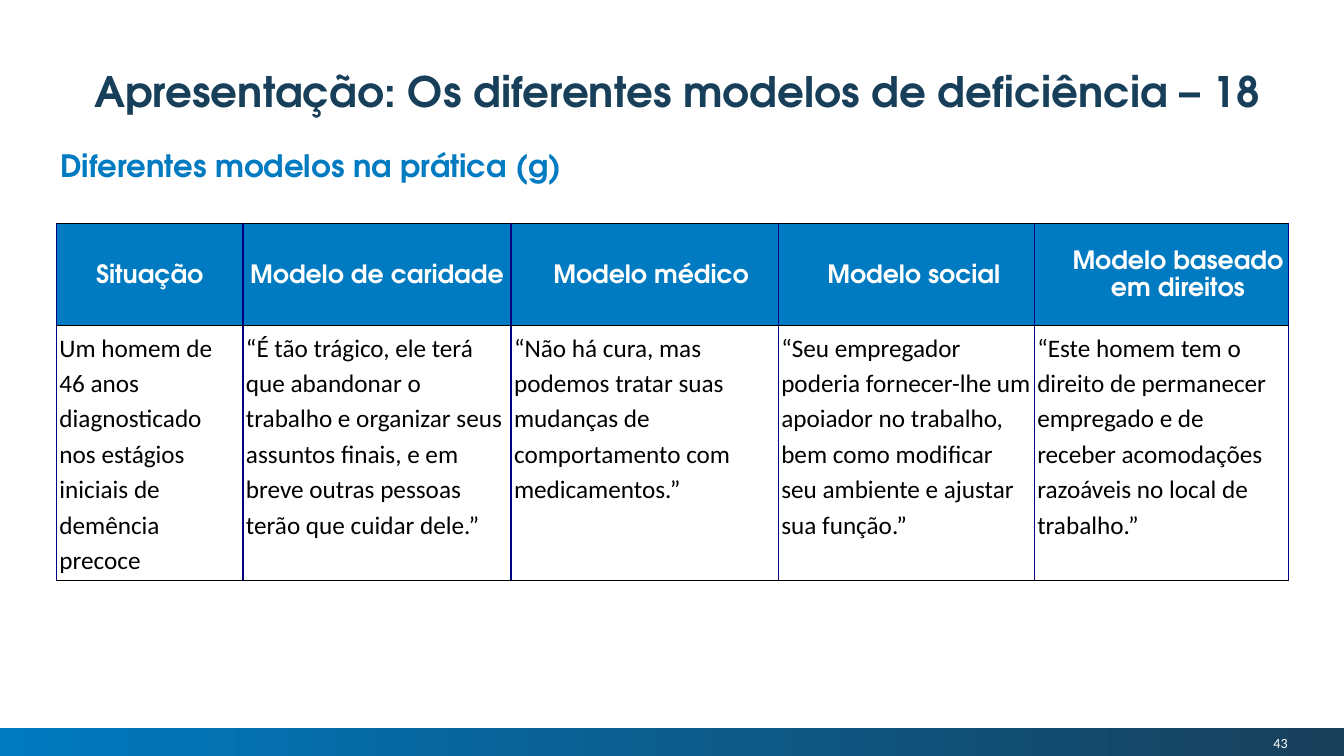
from lxml.etree import SubElement
from pptx import Presentation
from pptx.dml.color import RGBColor
from pptx.enum.shapes import MSO_SHAPE
from pptx.enum.text import MSO_ANCHOR, MSO_AUTO_SIZE, PP_ALIGN
from pptx.oxml.ns import qn
from pptx.util import Inches, Pt

BLUE = RGBColor(0x00, 0x7A, 0xC0)
DARK_BLUE = RGBColor(0x18, 0x3F, 0x5A)
NAVY = RGBColor(0x00, 0x00, 0x80)
BLACK = RGBColor(0x00, 0x00, 0x00)
WHITE = RGBColor(0xFF, 0xFF, 0xFF)

HEADING_FONT = "TeX Gyre Adventor"
BODY_FONT = "Calibri"
SLIDE_WIDTH, SLIDE_HEIGHT = Inches(13.33), Inches(7.5)

TITLE_FORMAT = {"name": HEADING_FONT, "size": Pt(30), "bold": True}
SUBTITLE_FORMAT = {"name": HEADING_FONT, "size": Pt(22), "bold": True}
HEADER_FORMAT = {"name": HEADING_FONT, "size": Pt(18), "bold": True}
BODY_FORMAT = {"name": BODY_FONT, "size": Pt(18), "bold": False}
NUMBER_FORMAT = {"name": BODY_FONT, "size": Pt(10), "bold": False}

# Heading, its left indent in inches, column width in % of the slide, example
MODELS = [
    ("Situação", 0, 13.88,
     "Um homem de 46 anos diagnosticado nos estágios iniciais de demência precoce"),
    ("Modelo de caridade", 0, 19.95,
     "“É tão trágico, ele terá que abandonar o trabalho e organizar seus assuntos "
     "finais, e em breve outras pessoas terão que cuidar dele.”"),
    ("Modelo médico", 0.13, 19.88,
     "“Não há cura, mas podemos tratar suas mudanças de comportamento com "
     "medicamentos.”"),
    ("Modelo social", 0.15, 19.05,
     "“Seu empregador poderia fornecer-lhe um apoiador no trabalho, bem como "
     "modificar seu ambiente e ajustar sua função.”"),
    ("Modelo baseado em direitos", 0.33, 18.9,
     "“Este homem tem o direito de permanecer empregado e de receber acomodações "
     "razoáveis no local de trabalho.”"),
]
ROW_HEIGHTS = (13.47, 33.73)
BORDERS = {"a:lnL": NAVY, "a:lnR": NAVY, "a:lnT": BLACK, "a:lnB": BLACK}


def across(percent):
    return round(SLIDE_WIDTH * percent / 100)


def down(percent):
    return round(SLIDE_HEIGHT * percent / 100)


def area(left, top, width, height):
    """Turn percentages of the slide into left, top, width and height."""
    return across(left), down(top), across(width), down(height)


def set_values(target, values):
    for attribute, value in values.items():
        setattr(target, attribute, value)


def set_margins(target, horizontal, vertical):
    set_values(target, {"margin_left": Inches(horizontal), "margin_right": Inches(horizontal),
                        "margin_top": Inches(vertical), "margin_bottom": Inches(vertical)})


def write(frame, text, font_format, color, align=PP_ALIGN.LEFT, spacing=1.0):
    paragraph = frame.paragraphs[0]
    paragraph.text = text
    set_values(paragraph, {"alignment": align, "line_spacing": spacing})
    set_values(paragraph.font, font_format)
    paragraph.font.color.rgb = color
    return paragraph


def add_title(slide, text):
    title = slide.shapes.title
    set_values(title, dict(zip(("left", "top", "width", "height"),
                               area(3.23, 7.33, 94.3, 6.27))))
    frame = title.text_frame
    set_values(frame, {"word_wrap": True, "auto_size": MSO_AUTO_SIZE.NONE,
                       "vertical_anchor": MSO_ANCHOR.TOP})
    set_margins(frame, 0.1, 0.05)
    write(frame, text, TITLE_FORMAT, DARK_BLUE, PP_ALIGN.CENTER, 1.1)


def add_label(slide, box, text, font_format, color, anchor, **layout):
    frame = slide.shapes.add_textbox(*box).text_frame
    set_values(frame, {"word_wrap": True, "vertical_anchor": anchor})
    set_margins(frame, 0, 0)
    write(frame, text, font_format, color, **layout)


def add_footer_band(slide):
    band = slide.shapes.add_shape(MSO_SHAPE.RECTANGLE, *area(0, 96.27, 100, 3.73))
    band.shadow.inherit = False
    band.line.fill.background()
    band.fill.gradient()
    band.fill.gradient_angle = 0
    for stop, color in zip(band.fill.gradient_stops, (BLUE, DARK_BLUE)):
        stop.color.rgb = color


def add_borders(cell):
    properties = cell._tc.get_or_add_tcPr()
    for side, color in BORDERS.items():
        line = SubElement(properties, qn(side), w=str(Pt(1)))
        fill = SubElement(line, qn("a:solidFill"))
        SubElement(fill, qn("a:srgbClr"), val=str(color))


def fill_cell(cell, text, font_format, color, background, margin, anchor, align, indent=0):
    add_borders(cell)
    cell.fill.solid()
    cell.fill.fore_color.rgb = background
    cell.vertical_anchor = anchor
    set_margins(cell, margin, margin)
    paragraph = write(cell.text_frame, text, font_format, color, align, 1.15)
    paragraph._p.get_or_add_pPr().set("marL", str(Inches(indent)))


def add_models_table(slide):
    total_width = sum(width for _, _, width, _ in MODELS)
    box = area(4.2, 29.6, total_width, sum(ROW_HEIGHTS))
    table = slide.shapes.add_table(len(ROW_HEIGHTS), len(MODELS), *box).table
    table.horz_banding = False
    for row, height in zip(table.rows, ROW_HEIGHTS):
        row.height = down(height)
    for index, (heading, indent, width, example) in enumerate(MODELS):
        table.columns[index].width = across(width)
        fill_cell(table.cell(0, index), heading, HEADER_FORMAT, WHITE, BLUE, 0,
                  MSO_ANCHOR.MIDDLE, PP_ALIGN.CENTER, indent)
        fill_cell(table.cell(1, index), example, BODY_FORMAT, BLACK, WHITE, 0.03,
                  MSO_ANCHOR.TOP, PP_ALIGN.LEFT)


def main():
    presentation = Presentation()
    set_values(presentation, {"slide_width": SLIDE_WIDTH, "slide_height": SLIDE_HEIGHT})
    slide = presentation.slides.add_slide(presentation.slide_layouts[5])
    add_footer_band(slide)
    add_label(slide, area(82.3, 96.67, 13.5, 3.2), "43", NUMBER_FORMAT, WHITE,
              MSO_ANCHOR.MIDDLE, align=PP_ALIGN.RIGHT)
    add_label(slide, area(4.5, 19.07, 91.67, 5.2), "Diferentes modelos na prática (g)",
              SUBTITLE_FORMAT, BLUE, MSO_ANCHOR.BOTTOM, spacing=1.5)
    add_models_table(slide)
    add_title(slide, "Apresentação: Os diferentes modelos de deficiência – 18")
    presentation.save("out.pptx")


if __name__ == "__main__":
    main()
